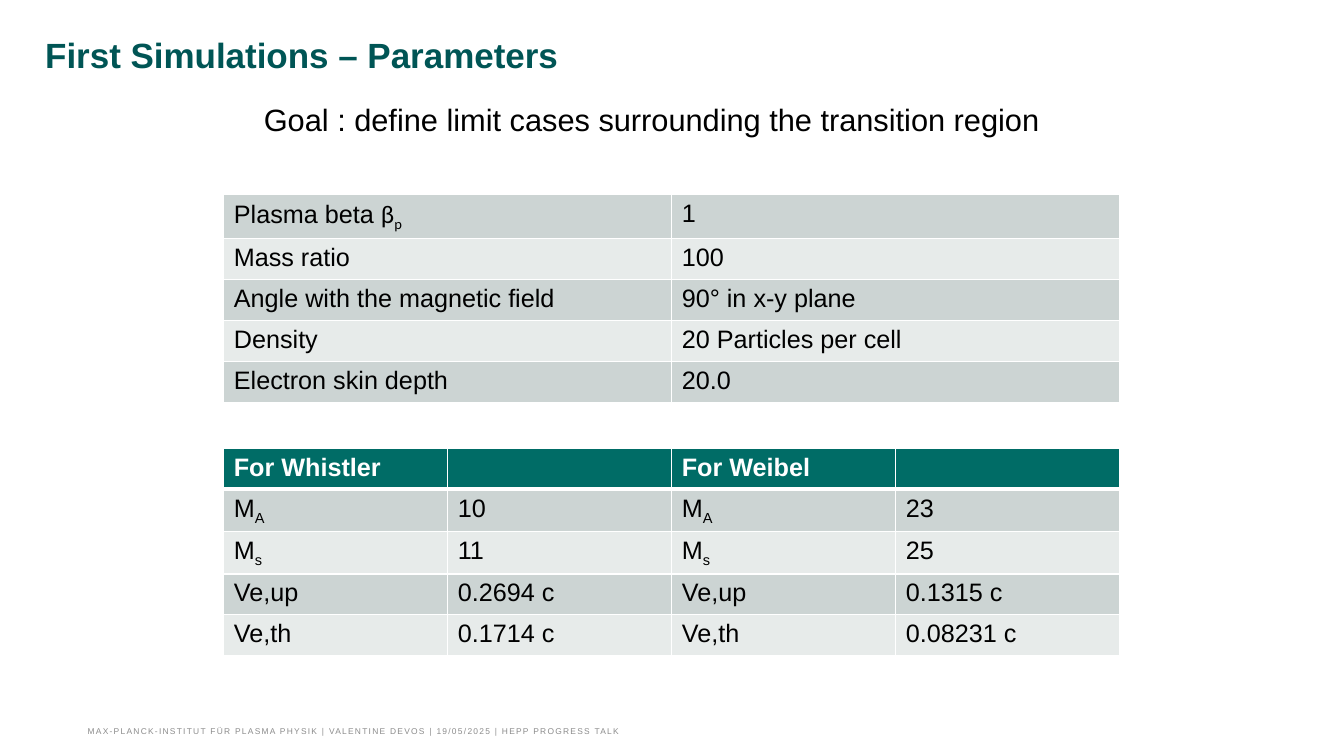
from dataclasses import dataclass
from pptx import Presentation
from pptx.dml.color import RGBColor as RGB
from pptx.enum.text import MSO_ANCHOR as Anchor, MSO_AUTO_SIZE as Fit, PP_ALIGN as Align
from pptx.oxml import parse_xml
from pptx.oxml.ns import nsdecls
from pptx.util import Cm, Pt


@dataclass(frozen=True)
class Theme:
    face: str = "Arial"
    greek: str = "Calibri"
    title: str = "005555"
    head: str = "006C66"
    odd: str = "CCD4D3"
    even: str = "E7EBEA"
    white: str = "FFFFFF"
    black: str = "000000"
    gray: str = "8C8C8C"
    big: float = 25
    goal: float = 22
    cell: float = 18
    foot: float = 6


THEME = Theme()
ROW = 1.03
LEFT, WIDTH = 5.64, 22.58
HALF = WIDTH / 2

PLASMA = [
    [("Plasma beta ", "β", "p"), ("1",)],
    [("Mass ratio",), ("100",)],
    [("Angle with the magnetic field",), ("90° in x-y plane",)],
    [("Density",), ("20 Particles per cell",)],
    [("Electron skin depth",), ("20.0",)],
]
LABELS = [("M", "A"), ("M", "s"), ("Ve,up",), ("Ve,th",)]
CASES = [
    ("For Whistler", ["10", "11", "0.2694 c", "0.1714 c"]),
    ("For Weibel", ["23", "25", "0.1315 c", "0.08231 c"]),
]


def style(run, size, color, bold=False, face=THEME.face):
    font = run.font
    font.name, font.size, font.bold = face, Pt(size), bold
    font.color.rgb = RGB.from_string(color)


def fill_text(shape, text, box, size, color, bold=False):
    shape.left, shape.top, shape.width, shape.height = map(Cm, box)
    frame = shape.text_frame
    frame.margin_left = frame.margin_right = frame.margin_top = frame.margin_bottom = 0
    frame.word_wrap = True
    frame.auto_size = Fit.NONE
    frame.vertical_anchor = Anchor.TOP
    frame.text = text
    para = frame.paragraphs[0]
    para.alignment = Align.LEFT
    style(para.runs[0], size, color, bold)
    return para


def add_text(slide, text, box, size, color):
    shape = slide.shapes.add_textbox(*map(Cm, box))
    return fill_text(shape, text, box, size, color)


def edge(cell, widths):
    props = cell._tc.get_or_add_tcPr()
    for side, width in zip("LRTB", widths):
        props.append(parse_xml(
            f'<a:ln{side} {nsdecls("a")} w="{Pt(width)}"><a:solidFill>'
            f'<a:srgbClr val="{THEME.white}"/></a:solidFill></a:ln{side}>'))


def fill_cell(cell, parts, color, bold):
    para = cell.text_frame.paragraphs[0]
    para.font.size = Pt(THEME.cell)
    for i, part in enumerate(parts):
        run = para.add_run()
        run.text = part
        face = THEME.greek if i and "β" in parts else THEME.face
        style(run, THEME.cell, color, bold, face)
        if i and i == len(parts) - 1:
            run.font._element.set("baseline", "-25000")


def add_grid(slide, rows, box, headed=False):
    count = len(rows[0])
    table = slide.shapes.add_table(len(rows), count, *map(Cm, box)).table
    table.first_row = table.horz_banding = False
    for col in table.columns:
        col.width = Cm(box[2] / count)
    for r, row in enumerate(rows):
        table.rows[r].height = Cm(box[3] / len(rows))
        top = headed and r == 0
        band = THEME.head if top else (THEME.odd, THEME.even)[(r - headed) % 2]
        ink = THEME.white if top else THEME.black
        for c, parts in enumerate(row):
            cell = table.cell(r, c)
            edge(cell, (1, 1, 3 if headed and r == 1 else 1, 3 if top else 1))
            cell.fill.solid()
            cell.fill.fore_color.rgb = RGB.from_string(band)
            fill_cell(cell, parts, ink, top)


def add_cases(slide, box):
    left, top, width, height = box
    step = width / len(CASES)
    for i, (name, values) in enumerate(CASES):
        rows = [[(name,), ()]] + [[label, (value,)] for label, value in zip(LABELS, values)]
        add_grid(slide, rows, (left + i * step, top, step, height), headed=True)


def add_head(slide, box):
    left, top, width, height = box
    title = fill_text(slide.shapes.title, "First Simulations – Parameters",
                      (left, top, width, 1.24), THEME.big, THEME.title, True)
    title.line_spacing = 0.9
    goal = add_text(slide, "Goal : define limit cases surrounding the transition region",
                    (left + 5.51, top + 1.7, 20.52, 0.81), THEME.goal, THEME.black)
    goal.line_spacing = Pt(23)


def add_foot(slide, box):
    para = add_text(slide, "MAX-PLANCK-INSTITUT FÜR PLASMA PHYSIK | VALENTINE DEVOS | "
                    "19/05/2025 | HEPP PROGRESS TALK", box, THEME.foot, THEME.gray)
    para.runs[0].font._element.set("spc", "90")


def main():
    deck = Presentation()
    deck.slide_width, deck.slide_height = Cm(33.87), Cm(19.05)
    slide = deck.slides.add_slide(deck.slide_layouts[5])
    add_head(slide, (1.14, 0.97, 31.6, 2.51))
    add_grid(slide, PLASMA, (LEFT, 4.9, WIDTH, ROW * len(PLASMA)))
    add_cases(slide, (LEFT, 11.3, WIDTH, ROW * (len(LABELS) + 1)))
    add_foot(slide, (2.21, 18.29, 27.64, 0.51))
    deck.save("out.pptx")


if __name__ == "__main__":
    main()
